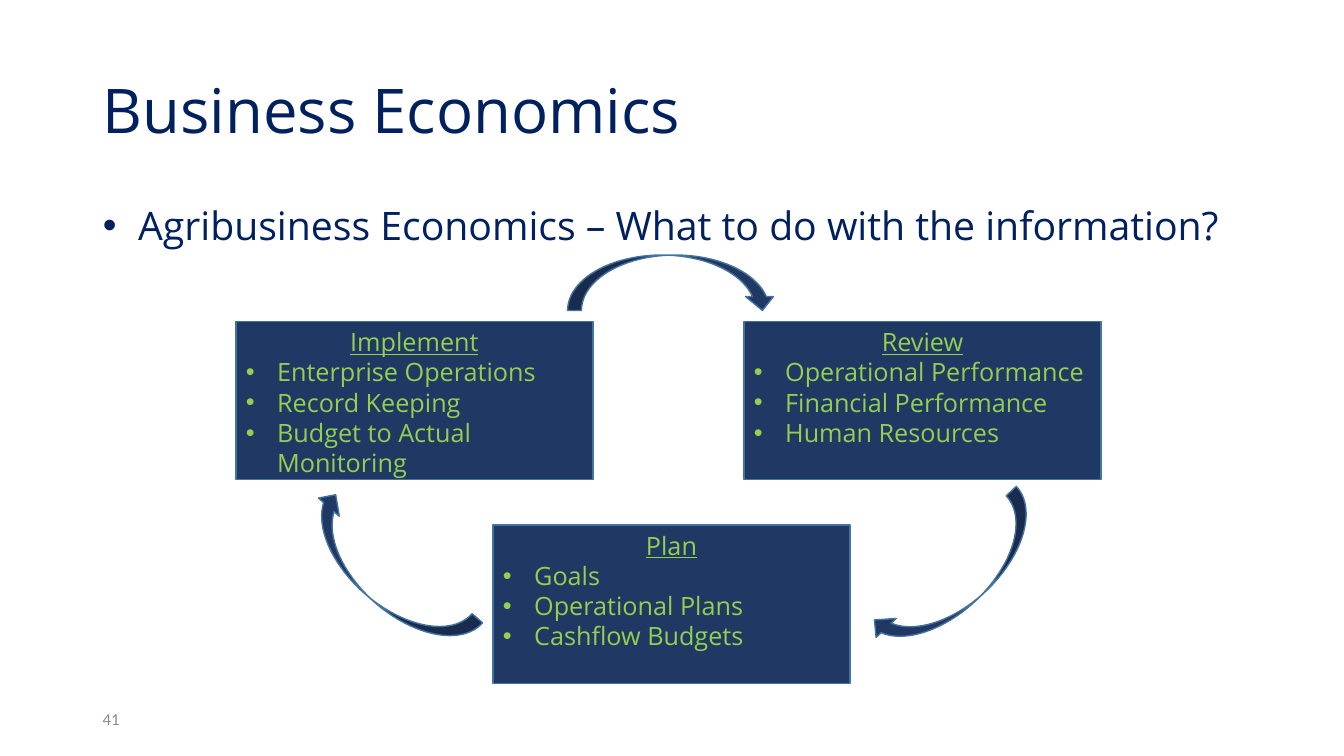
from pptx import Presentation
from pptx.dml.color import RGBColor
from pptx.enum.shapes import MSO_SHAPE
from pptx.enum.text import MSO_ANCHOR, PP_ALIGN
from pptx.oxml.ns import qn
from pptx.util import Inches, Pt
from lxml import etree

TITLE = "Business Economics"
QUESTION = "Agribusiness Economics – What to do with the information?"
NUMBER = "41"
STEPS = [
    ("Review", (7.38, 3.19),
     ["Operational Performance", "Financial Performance", "Human Resources"]),
    ("Plan", (4.89, 5.21),
     ["Goals", "Operational Plans", "Cashflow Budgets"]),
    ("Implement", (2.34, 3.19),
     ["Enterprise Operations", "Record Keeping", "Budget to Actual Monitoring"]),
]
ARROWS = [((6.39, 1.77), 270), ((9.24, 4.7), 46.7), ((3.55, 4.67), 131.1)]
BOX_SIZE = (3.54, 1.57)
ARROW_SIZE = (0.55, 2.07)
LEFT, WIDTH = 0.92, 11.5
NAVY, FILL, EDGE, GREEN, GREY = "002060", "203864", "43739E", "92D050", "8C8C8C"
HEADING = dict(name="Open Sans", size=Pt(18), underline=True)
ITEM = dict(name="Open Sans", size=Pt(18), underline=False)


def rgb(code):
    return RGBColor.from_string(code)


def place(sp, at, size):
    for key, value in zip(("left", "top", "width", "height"), at + size):
        setattr(sp, key, Inches(value))


def write(p, text, color, fonts, align=PP_ALIGN.LEFT, indent=0, hang=0, **spacing):
    p.alignment = align
    if indent:
        pPr = p._p.get_or_add_pPr()
        pPr.set("marL", str(Inches(indent)))
        pPr.set("indent", str(-Inches(hang or indent)))
        font = etree.SubElement(pPr, qn("a:buFont"))
        font.set("typeface", "Arial")
        etree.SubElement(pPr, qn("a:buChar")).set("char", "•")
    for key, value in spacing.items():
        setattr(p, key, value)
    r = p.add_run()
    r.text = text
    for key, value in fonts.items():
        setattr(r.font, key, value)
    r.font.color.rgb = rgb(color)


def add_block(slide, kind, at, size):
    sp = slide.shapes.add_shape(kind, *map(Inches, at + size))
    sp.shadow.inherit = False
    sp.fill.solid()
    sp.fill.fore_color.rgb = rgb(FILL)
    sp.line.color.rgb = rgb(EDGE)
    sp.line.width = Pt(1)
    return sp


def main():
    """Build the business economics cycle slide."""
    prs = Presentation()
    prs.slide_width, prs.slide_height = Inches(13.33), Inches(7.5)
    slide = prs.slides.add_slide(prs.slide_layouts[1])

    title, body = slide.placeholders
    place(title, (LEFT, 0.4), (WIDTH, 1.45))
    title.text_frame.vertical_anchor = MSO_ANCHOR.MIDDLE
    write(title.text_frame.paragraphs[0], TITLE, NAVY,
          dict(name="Open Sans", size=Pt(44)), line_spacing=0.9)
    place(body, (LEFT, 2), (WIDTH, 4.76))
    write(body.text_frame.paragraphs[0], QUESTION, NAVY,
          dict(name="Open Sans", size=Pt(28)), indent=0.35,
          line_spacing=0.9, space_before=Pt(0))

    number = slide.shapes.add_textbox(*map(Inches, (LEFT, 6.93, 3, 0.4)))
    tf = number.text_frame
    tf.word_wrap = True
    tf.vertical_anchor = MSO_ANCHOR.MIDDLE
    write(tf.paragraphs[0], NUMBER, GREY, dict(name="Calibri", size=Pt(12)))

    for heading, at, items in STEPS:
        tf = add_block(slide, MSO_SHAPE.RECTANGLE, at, BOX_SIZE).text_frame
        tf.word_wrap = True
        tf.vertical_anchor = MSO_ANCHOR.TOP
        write(tf.paragraphs[0], heading, GREEN, HEADING, PP_ALIGN.CENTER)
        for item in items:
            write(tf.add_paragraph(), item, GREEN, ITEM, indent=0.31)

    for at, angle in ARROWS:
        add_block(slide, MSO_SHAPE.CURVED_LEFT_ARROW, at, ARROW_SIZE).rotation = angle

    prs.save("out.pptx")


if __name__ == "__main__":
    main()
